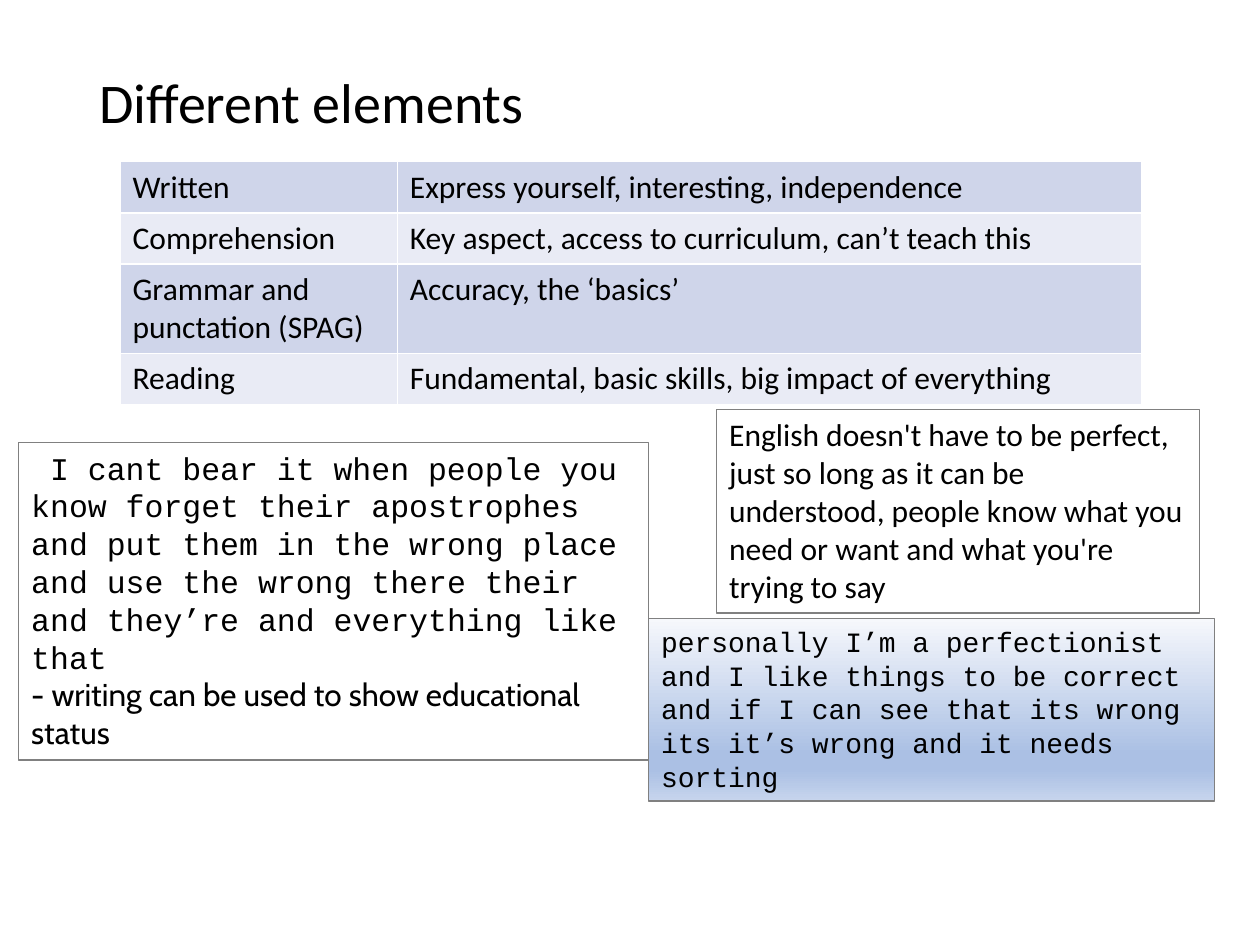
from dataclasses import dataclass

from lxml.etree import SubElement
from pptx import Presentation
from pptx.dml.color import RGBColor
from pptx.enum.shapes import MSO_SHAPE
from pptx.enum.text import MSO_ANCHOR, MSO_AUTO_SIZE, PP_ALIGN
from pptx.oxml.ns import qn
from pptx.util import Cm, Pt


@dataclass(frozen=True)
class Theme:
    text: str = "000000"
    outline: str = "808080"
    border: str = "FFFFFF"
    bands: tuple = ("CFD5EA", "E9EBF5")
    gradient: tuple = ((0, "F6F8FC"), (74, "ABC0E4"), (83, "ABC0E4"), (100, "C7D5ED"))
    title_size: int = 32
    body_size: int = 18
    small_size: int = 16
    body_font: str = "Calibri"
    quote_font: str = "Courier New"
    note_font: str = "Cabin"


theme = Theme()


def write(paragraph, text, font=theme.body_font, size=theme.body_size,
          line_spacing=None, indent=None):
    paragraph.text = text
    paragraph.alignment = PP_ALIGN.LEFT
    if line_spacing:
        paragraph.line_spacing = line_spacing
    if indent:
        paragraph._p.get_or_add_pPr().set("indent", str(indent))
    paragraph.font.name = font
    paragraph.font.size = Pt(size)
    paragraph.font.color.rgb = RGBColor.from_string(theme.text)


def add_solid(parent, color):
    SubElement(parent, qn("a:srgbClr")).set("val", color)


presentation = Presentation()
presentation.slide_width, presentation.slide_height = Cm(25.4), Cm(19.05)
slide = presentation.slides.add_slide(presentation.slide_layouts[5])

# Title
title = slide.shapes.title
title.left, title.top, title.width, title.height = Cm(1.75), Cm(1.02), Cm(21.9), Cm(2.2)
title.text_frame.vertical_anchor = MSO_ANCHOR.MIDDLE
write(title.text_frame.paragraphs[0], "Different elements",
      size=theme.title_size, line_spacing=0.9)

# Table of elements, banded by row
elements = [
    ("Written", "Express yourself, interesting, independence"),
    ("Comprehension", "Key aspect, access to curriculum, can’t teach this"),
    ("Grammar and punctation (SPAG)", "Accuracy, the ‘basics’"),
    ("Reading", "Fundamental, basic skills, big impact of everything"),
]
row_heights = [1.03, 1.03, 1.79, 1.03]
column_widths = [5.59, 15.01]
table = slide.shapes.add_table(
    len(elements), len(column_widths), Cm(2.42), Cm(3.26),
    Cm(sum(column_widths)), Cm(sum(row_heights))).table
table.first_row = False
for column, width in zip(table.columns, column_widths):
    column.width = Cm(width)
for row_index, (row, height) in enumerate(zip(table.rows, row_heights)):
    row.height = Cm(height)
    for cell, text in zip(row.cells, elements[row_index]):
        write(cell.text_frame.paragraphs[0], text)
        properties = cell._tc.get_or_add_tcPr()
        for side in ("lnL", "lnR", "lnT", "lnB"):
            border = SubElement(properties, qn(f"a:{side}"), w=str(Pt(1)))
            add_solid(SubElement(border, qn("a:solidFill")), theme.border)
        cell.fill.solid()
        cell.fill.fore_color.rgb = RGBColor.from_string(theme.bands[row_index % 2])

# Opinion boxes: position and size, gradient or not, paragraphs with their format
quote = {"font": theme.quote_font}
boxes = [
    ((0.38, 8.92, 12.7, 6.4), False, [
        ("I cant bear it when people you know forget their apostrophes and put them in "
         "the wrong place and use the wrong there their and they’re and everything like "
         "that", {**quote, "indent": Cm(0.38)}),
        ("- writing can be used to show educational status", {"font": theme.note_font}),
    ]),
    ((14.45, 8.25, 9.73, 4.11), False, [
        ("English doesn't have to be perfect, just so long as it can be understood, "
         "people know what you need or want and what you're trying to say", {}),
    ]),
    ((13.08, 12.47, 11.4, 3.68), True, [
        ("personally I’m a perfectionist and I like things to be correct and if I can "
         "see that its wrong its it’s wrong and it needs sorting",
         {**quote, "size": theme.small_size}),
    ]),
]
for bounds, has_gradient, paragraphs in boxes:
    box = slide.shapes.add_shape(MSO_SHAPE.RECTANGLE, *map(Cm, bounds))
    box.shadow.inherit = False
    box.line.color.rgb = RGBColor.from_string(theme.outline)
    box.line.width = Pt(0.75)
    if has_gradient:
        box.fill.gradient()
        box.fill.gradient_angle = 270
        stops = box._element.spPr.find(qn("a:gradFill")).find(qn("a:gsLst"))
        for stop in list(stops):
            stops.remove(stop)
        for position, color in theme.gradient:
            add_solid(SubElement(stops, qn("a:gs"), pos=str(position * 1000)), color)
    else:
        box.fill.background()
    frame = box.text_frame
    frame.word_wrap = True
    frame.auto_size = MSO_AUTO_SIZE.SHAPE_TO_FIT_TEXT
    frame.vertical_anchor = MSO_ANCHOR.TOP
    for index, (text, text_format) in enumerate(paragraphs):
        paragraph = frame.add_paragraph() if index else frame.paragraphs[0]
        write(paragraph, text, **text_format)

presentation.save("out.pptx")
